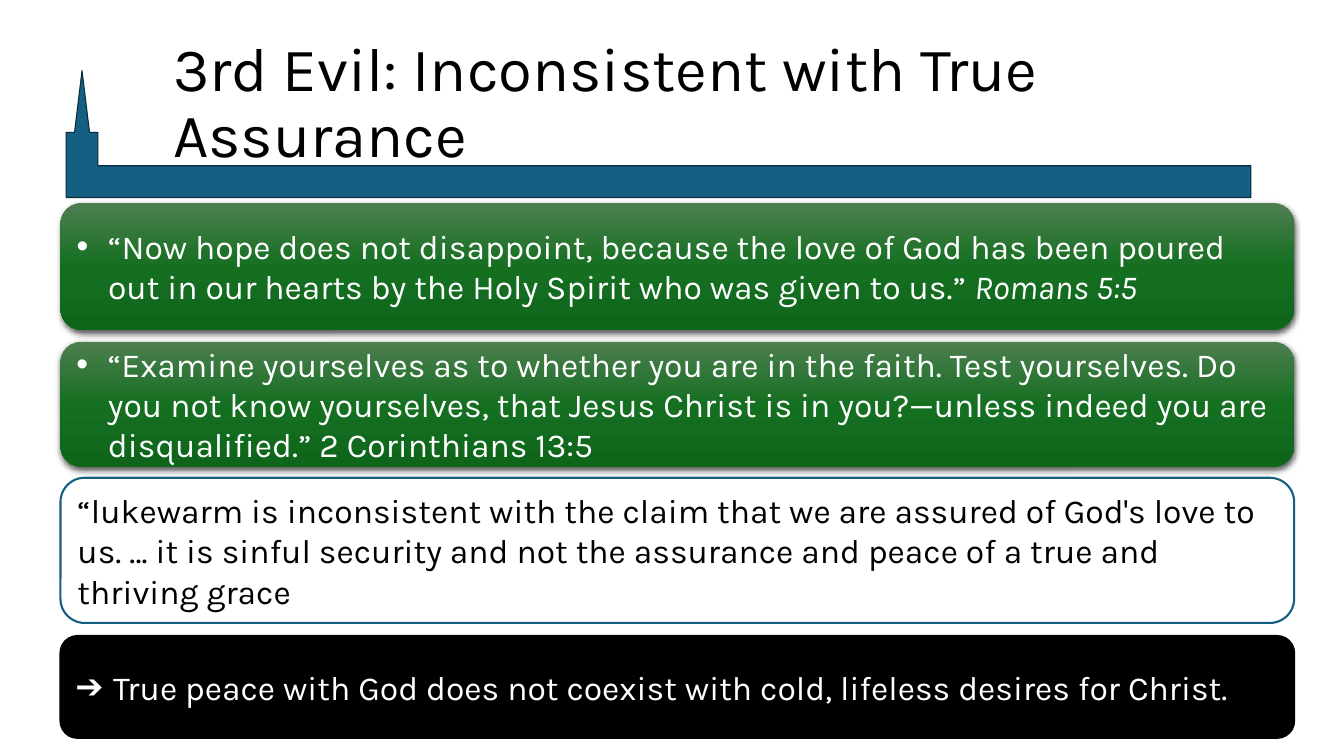
from copy import deepcopy

from lxml.etree import SubElement
from pptx import Presentation
from pptx.dml.color import RGBColor
from pptx.enum.shapes import MSO_SHAPE
from pptx.enum.text import MSO_ANCHOR, PP_ALIGN
from pptx.oxml.ns import qn
from pptx.util import Pt

COLORS = {
    "blue": "156082",
    "navy": "092A39",
    "green_top": "4D7E50",
    "green_middle": "156F21",
    "green_bottom": "0F661B",
    "black": "000000",
    "white": "FFFFFF",
}
FONT = "Karla"
PANEL_LEFT = 43.2
PANEL_WIDTH = 881.2


def rgb(name):
    return RGBColor.from_string(COLORS[name])


def style_runs(paragraph, size, color):
    for run in paragraph.runs:
        run.font.name = FONT
        run.font.size = Pt(size)
        run.font.color.rgb = rgb(color)


def paint(shape, fill, line, width):
    shape.shadow.inherit = False
    shape.fill.solid()
    shape.fill.fore_color.rgb = rgb(fill)
    shape.line.color.rgb = rgb(line)
    shape.line.width = Pt(width)


def paint_green(shape):
    shape.shadow.inherit = False
    shape.line.fill.background()
    shape.fill.gradient()
    shape.fill.gradient_angle = 270
    properties = shape._element.spPr
    stops = properties.find(qn("a:gradFill")).find(qn("a:gsLst"))
    stops.append(deepcopy(stops[-1]))
    shades = ("green_top", "green_middle", "green_bottom")
    for index, (stop, shade) in enumerate(zip(shape.fill.gradient_stops, shades)):
        stop.position = index / 2
        stop.color.rgb = rgb(shade)
    shadow = SubElement(
        properties.find(qn("a:effectLst")), qn("a:outerShdw"),
        blurRad=str(Pt(4.5)), dist=str(Pt(1.5)), dir="5400000", rotWithShape="0",
    )
    shade = SubElement(shadow, qn("a:srgbClr"), val=COLORS["black"])
    SubElement(shade, qn("a:alpha"), val="63000")


def add_bullet(paragraph, symbol, indent):
    properties = paragraph._p.get_or_add_pPr()
    properties.set("marL", str(Pt(indent)))
    properties.set("indent", str(-Pt(indent)))
    SubElement(properties, qn("a:buFont"), typeface="Arial")
    SubElement(properties, qn("a:buChar"), char=symbol)


def add_steeple(slide):
    steeple = slide.shapes.add_shape(
        MSO_SHAPE.BENT_UP_ARROW, Pt(53.3), Pt(50.4), Pt(840.2), Pt(90.7)
    )
    for index, ratio in enumerate((0.25, 0.059, 0.487)):
        steeple.adjustments[index] = ratio
    steeple._element.spPr.find(qn("a:xfrm")).set("flipH", "1")
    paint(steeple, "blue", "navy", 0.75)


def add_title(slide, text):
    title = slide.shapes.add_textbox(Pt(116.6), Pt(29.5), Pt(777.6), Pt(90.7))
    frame = title.text_frame
    frame.word_wrap = True
    frame.vertical_anchor = MSO_ANCHOR.MIDDLE
    frame.text = text
    frame.paragraphs[0].line_spacing = 0.9
    style_runs(frame.paragraphs[0], 44, "black")


def add_panel(slide, top, height, text, color, bullet=None, indent=0, citation=""):
    panel = slide.shapes.add_shape(
        MSO_SHAPE.ROUNDED_RECTANGLE, Pt(PANEL_LEFT), Pt(top), Pt(PANEL_WIDTH), Pt(height)
    )
    frame = panel.text_frame
    frame.word_wrap = True
    frame.vertical_anchor = MSO_ANCHOR.MIDDLE
    frame.text = text
    paragraph = frame.paragraphs[0]
    paragraph.alignment = PP_ALIGN.LEFT
    if bullet:
        add_bullet(paragraph, bullet, indent)
    if citation:
        reference = paragraph.add_run()
        reference.text = citation
        reference.font.italic = True
    style_runs(paragraph, 24, color)
    return panel


def main():
    presentation = Presentation()
    presentation.slide_width = Pt(960)
    presentation.slide_height = Pt(540)
    slide = presentation.slides.add_slide(presentation.slide_layouts[6])

    add_steeple(slide)
    add_title(slide, "3rd Evil: Inconsistent with True Assurance")

    romans = add_panel(
        slide, 144.9, 90.7,
        "“Now hope does not disappoint, because the love of God has been poured "
        "out in our hearts by the Holy Spirit who was given to us.” ",
        "white", "•", 22.5, "Romans 5:5",
    )
    corinthians = add_panel(
        slide, 244.1, 89.3,
        "“Examine yourselves as to whether you are in the faith. Test yourselves. "
        "Do you not know yourselves, that Jesus Christ is in you?—unless indeed "
        "you are disqualified.” 2 Corinthians 13:5",
        "white", "•", 22.5,
    )
    for scripture in (romans, corinthians):
        paint_green(scripture)

    quotation = add_panel(
        slide, 341.3, 103.7,
        "“lukewarm is inconsistent with the claim that we are assured of God's "
        "love to us. … it is sinful security and not the assurance and peace of "
        "a true and thriving grace",
        "black",
    )
    paint(quotation, "white", "blue", 1.5)

    conclusion = add_panel(
        slide, 454.3, 72.7,
        "True peace with God does not coexist with cold, lifeless desires for Christ.",
        "white", "➔", 27,
    )
    paint(conclusion, "black", "black", 1.5)

    presentation.save("out.pptx")


if __name__ == "__main__":
    main()
